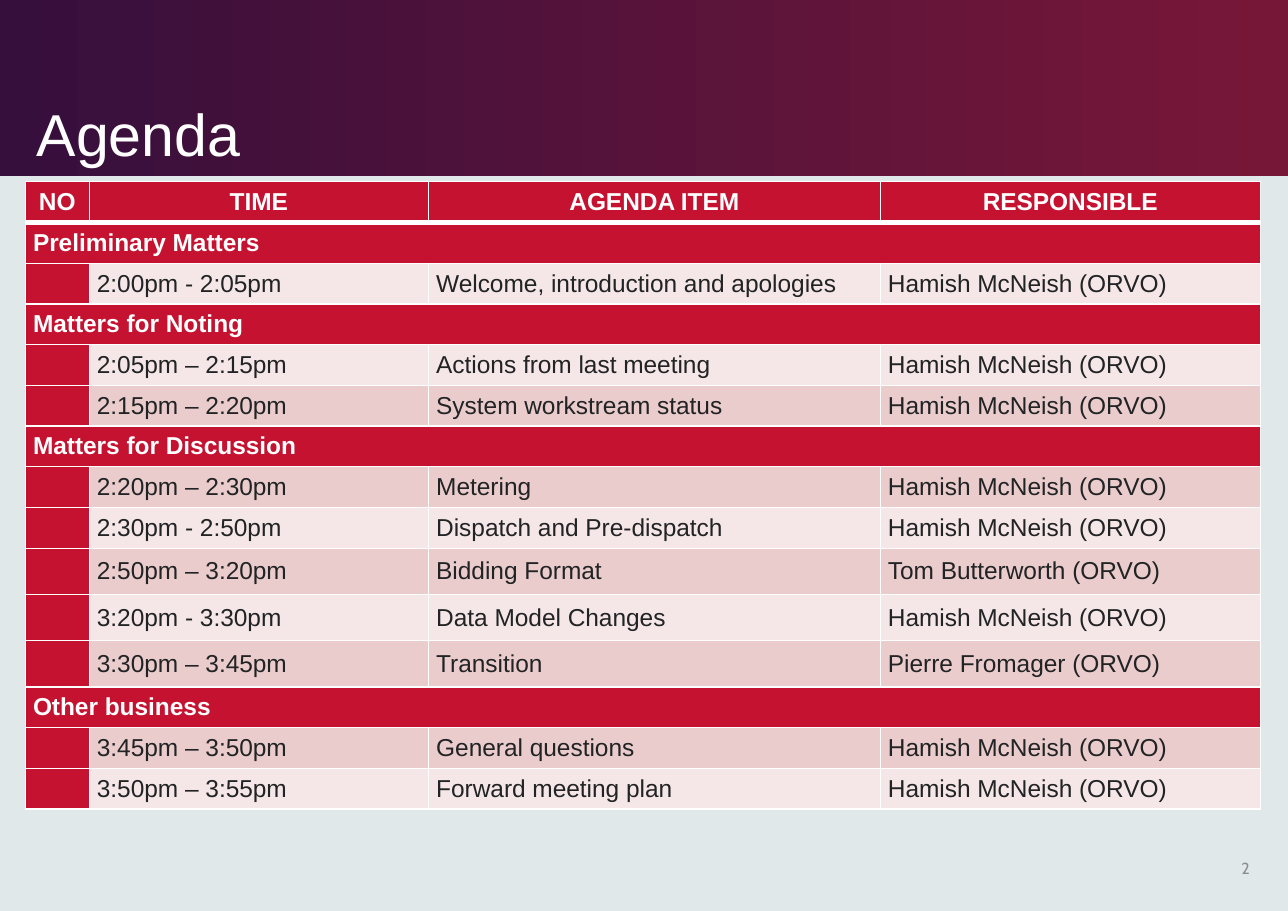
from lxml import etree
from pptx import Presentation
from pptx.dml.color import RGBColor
from pptx.enum.shapes import MSO_SHAPE
from pptx.enum.text import MSO_ANCHOR, PP_ALIGN
from pptx.oxml.ns import qn
from pptx.util import Inches, Pt

RECT = MSO_SHAPE.RECTANGLE
MIDDLE, BOTTOM = MSO_ANCHOR.MIDDLE, MSO_ANCHOR.BOTTOM
LEFT, CENTER, RIGHT = PP_ALIGN.LEFT, PP_ALIGN.CENTER, PP_ALIGN.RIGHT

WIDTH, HEIGHT = 11.69, 8.27
COLORS = {
    "background": "E0E8EA", "plum": "360F3C", "wine": "771738",
    "red": "C41230", "light": "F5E7E8", "dark": "EACCCD",
    "white": "FFFFFF", "ink": "222324", "grey": "8D8D8E",
}

COL_WIDTHS = [0.58, 3.08, 4.1, 3.45]
ROW_HEIGHT, TALL_HEIGHT = 0.37, 0.42
TALL_ITEMS = {"Bidding Format", "Data Model Changes", "Transition"}
HEADINGS = ["NO", "TIME", "AGENDA ITEM", "RESPONSIBLE"]
CHAIR = "Hamish McNeish (ORVO)"
SECTIONS = {
    "Preliminary Matters": [
        ("2:00pm - 2:05pm", "Welcome, introduction and apologies", CHAIR),
    ],
    "Matters for Noting": [
        ("2:05pm – 2:15pm", "Actions from last meeting", CHAIR),
        ("2:15pm – 2:20pm", "System workstream status", CHAIR),
    ],
    "Matters for Discussion": [
        ("2:20pm – 2:30pm", "Metering", CHAIR),
        ("2:30pm - 2:50pm", "Dispatch and Pre-dispatch", CHAIR),
        ("2:50pm – 3:20pm", "Bidding Format", "Tom Butterworth (ORVO)"),
        ("3:20pm - 3:30pm", "Data Model Changes", CHAIR),
        ("3:30pm – 3:45pm", "Transition", "Pierre Fromager (ORVO)"),
    ],
    "Other business": [
        ("3:45pm – 3:50pm", "General questions", CHAIR),
        ("3:50pm – 3:55pm", "Forward meeting plan", CHAIR),
    ],
}


def rgb(name):
    return RGBColor.from_string(COLORS[name])


def write(tf, text, size=16, font="Arial", color="ink", bold=False,
          align=LEFT, spacing=None, gap=0):
    p = tf.paragraphs[0]
    p.alignment = align
    p.line_spacing = spacing
    p.space_before = p.space_after = Pt(gap)
    r = p.add_run()
    r.text = text
    r.font.size, r.font.name, r.font.bold = Pt(size), font, bold
    r.font.color.rgb = rgb(color)


def add_text(s, box, text, anchor, **style):
    tf = s.shapes.add_textbox(*map(Inches, box)).text_frame
    tf.word_wrap = True
    tf.vertical_anchor = anchor
    write(tf, text, **style)


def add_banner(s, box):
    left, top, width, height = box
    sp = s.shapes.add_shape(RECT, *map(Inches, box))
    sp.shadow.inherit = False
    sp.line.fill.background()
    sp.fill.gradient()
    sp.fill.gradient_angle = 0
    for stop, color, position in zip(sp.fill.gradient_stops,
                                     ("plum", "wine"), (0, 0.99)):
        stop.color.rgb = rgb(color)
        stop.position = position
    title_box = (left + 0.02 * width, top + 0.1 * height,
                 0.74 * width, 0.89 * height)
    add_text(s, title_box, "Agenda", BOTTOM, size=38.6, color="white",
             spacing=0.9)


def set_borders(cell, **widths):
    """Draw white cell borders; widths are points keyed by L, R, T and B."""
    tc_pr = cell._tc.get_or_add_tcPr()
    for side, width in widths.items():
        ln = etree.SubElement(tc_pr, qn(f"a:ln{side}"), w=str(Pt(width)))
        fill = etree.SubElement(ln, qn("a:solidFill"))
        etree.SubElement(fill, qn("a:srgbClr"), val=COLORS["white"])


def format_cell(cell, fill, text="", top=1, bottom=1, **style):
    cell.margin_left = cell.margin_right = Inches(0.07)
    cell.margin_top = cell.margin_bottom = 0
    cell.vertical_anchor = MIDDLE
    set_borders(cell, L=1, R=1, T=top, B=bottom)
    cell.fill.solid()
    cell.fill.fore_color.rgb = rgb(fill)
    if text:
        write(cell.text_frame, text, gap=1, **style)


def agenda_rows():
    """List the rows in order; a section row holds its title only."""
    rows = [HEADINGS]
    for section, items in SECTIONS.items():
        rows.append([section])
        rows.extend(["", *item] for item in items)
    return rows


def add_agenda(s, left, top):
    rows = agenda_rows()
    heights = [TALL_HEIGHT if TALL_ITEMS & set(row) else ROW_HEIGHT
               for row in rows]
    box = (left, top, sum(COL_WIDTHS), sum(heights))
    table = s.shapes.add_table(len(rows), len(COL_WIDTHS),
                               *map(Inches, box)).table
    table.horz_banding = False
    for column, width in zip(table.columns, COL_WIDTHS):
        column.width = Inches(width)

    strong = {"color": "white", "bold": True}
    for i, (row, height) in enumerate(zip(rows, heights)):
        table.rows[i].height = Inches(height)
        cells = list(table.rows[i].cells)
        if i == 0:
            for cell, text in zip(cells, row):
                format_cell(cell, "red", text, bottom=3, align=CENTER, **strong)
        elif len(row) == 1:
            cells[0].merge(cells[-1])
            for cell, text in zip(cells, row + [""] * 3):
                format_cell(cell, "red", text, top=3 if i == 1 else 1, **strong)
        else:
            band = "dark" if i % 2 else "light"
            for cell, text in zip(cells, row):
                format_cell(cell, band if text else "red", text)


def main():
    prs = Presentation()
    prs.slide_width, prs.slide_height = Inches(WIDTH), Inches(HEIGHT)
    s = prs.slides.add_slide(prs.slide_layouts[6])
    s.background.fill.solid()
    s.background.fill.fore_color.rgb = rgb("background")
    add_banner(s, (0, 0, WIDTH, 1.6))
    add_text(s, (10.89, 7.66, 0.55, 0.44), "2", MIDDLE, size=10.5,
             font="Cabin", color="grey", align=RIGHT)
    add_agenda(s, 0.23, 1.65)
    prs.save("out.pptx")


if __name__ == "__main__":
    main()
